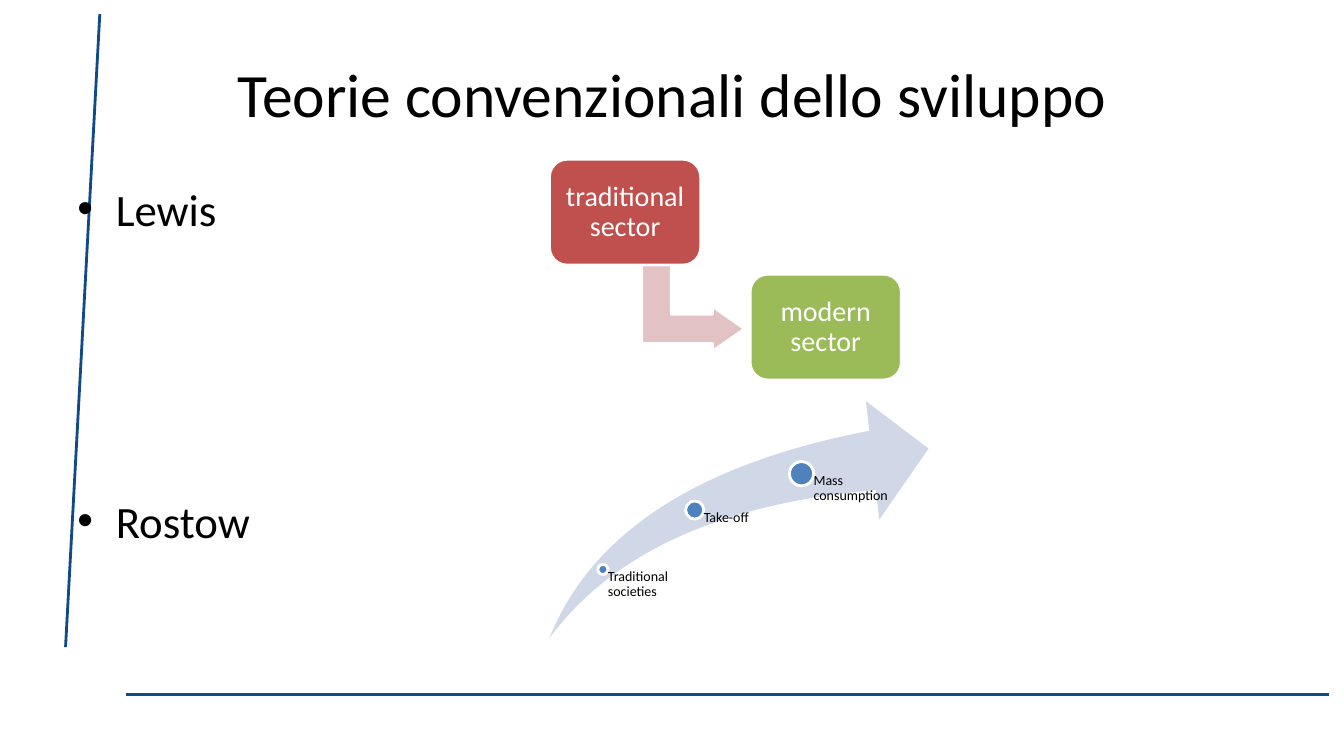
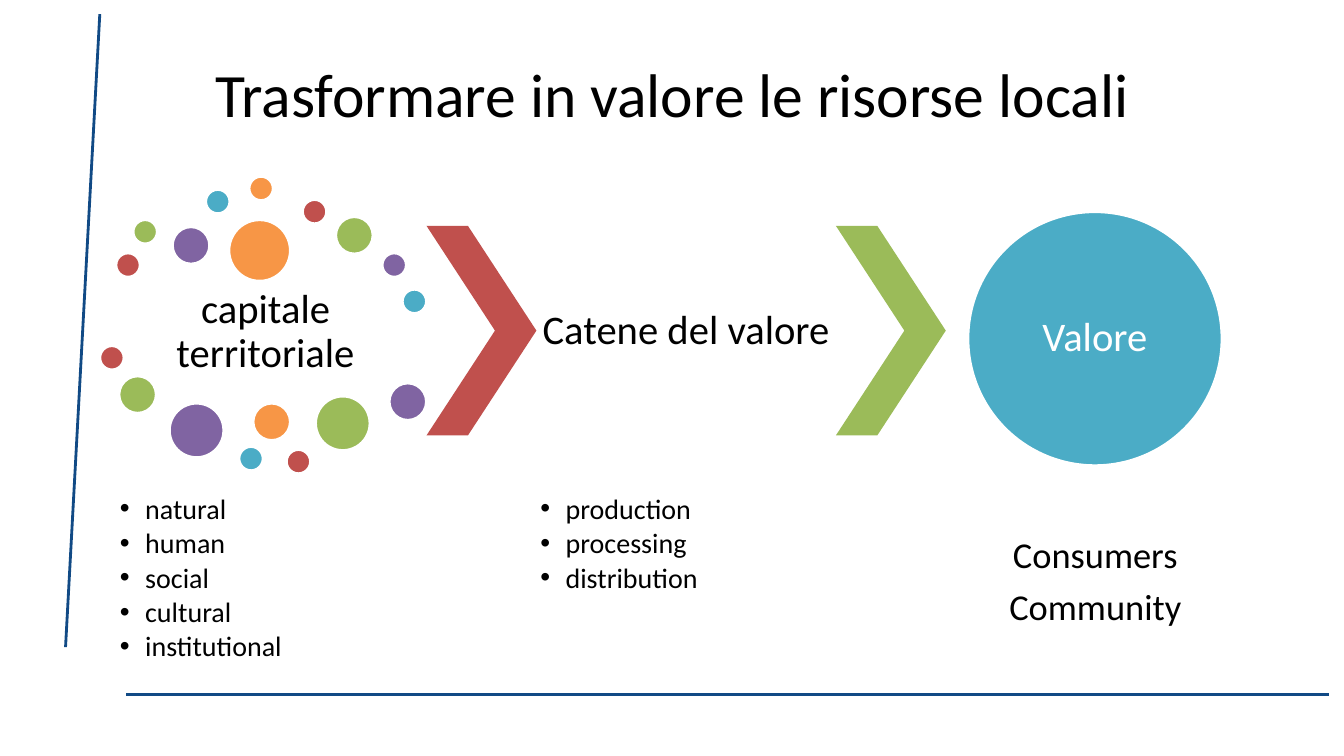
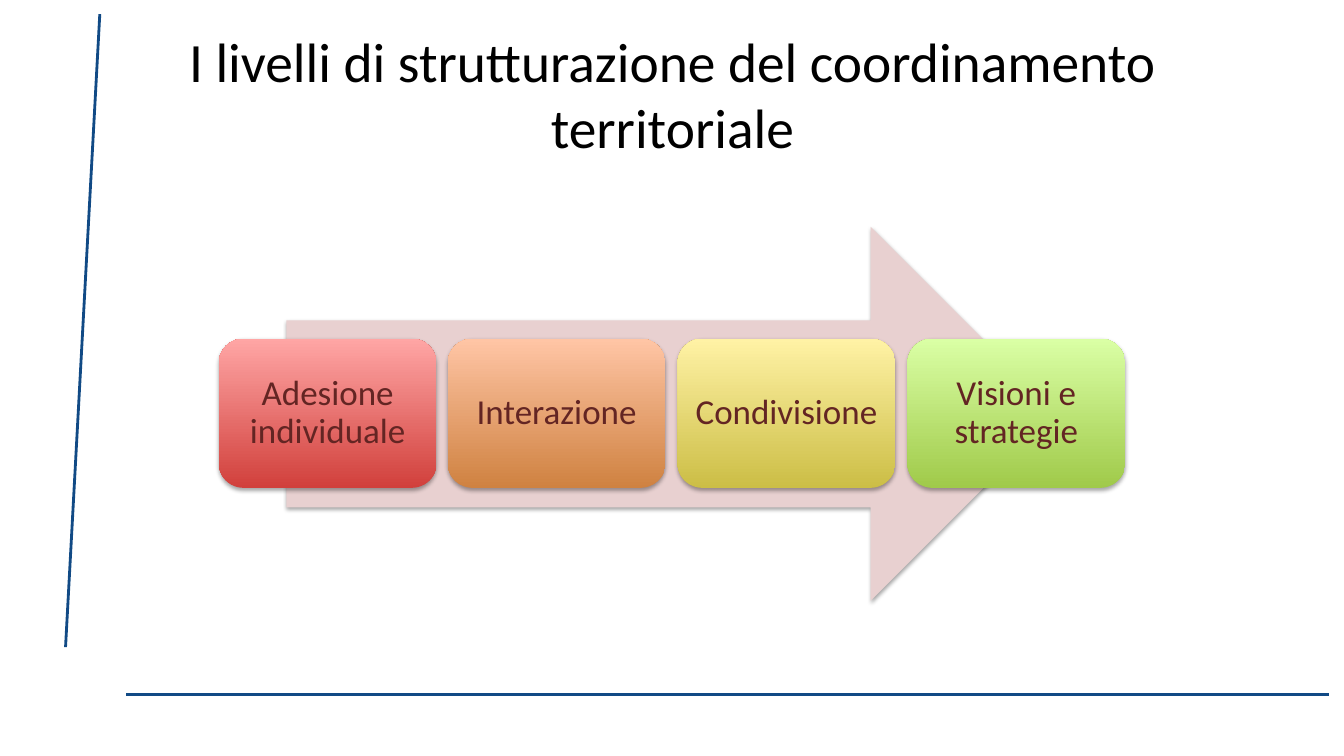
from dataclasses import dataclass
from itertools import cycle
from typing import NamedTuple, Optional

from lxml.etree import SubElement as Sub
from pptx import Presentation
from pptx.dml.color import RGBColor as Rgb
from pptx.enum.shapes import MSO_CONNECTOR as Link, MSO_SHAPE as Kind
from pptx.enum.text import MSO_ANCHOR as Anchor, PP_ALIGN as Align
from pptx.oxml.ns import qn
from pptx.util import Emu, Pt

SCALE = 9144  # EMU per px, 100 px to the inch


@dataclass(frozen=True)
class Theme:
    font: str = "Calibri"
    black: str = "000000"
    white: str = "FFFFFF"
    rule: str = "114A85"
    red: str = "C0504D"
    green: str = "9BBB59"
    purple: str = "8064A2"
    teal: str = "4BACC6"
    orange: str = "F79646"
    blue: str = "4F81BD"
    swoosh: str = "D0D8E8"
    bend: str = "E2C2C2"
    arrow: str = "E8D0D0"
    wine: str = "632523"
    title: float = 44
    long: float = 39.6  # two-line title
    body: float = 32
    head: float = 29
    aim: float = 26
    card: float = 25
    item: float = 20
    small: float = 10
    edge: float = 2


T = Theme()


class Box(NamedTuple):
    x: int
    y: int
    w: int
    h: int


class Style(NamedTuple):
    size: float
    color: str = T.black
    align: Align = Align.CENTER
    anchor: Anchor = Anchor.MIDDLE
    inset: tuple = (4, 4, 4, 4)
    line: float = 0.9
    after: float = 0
    before: float = 0  # from the second paragraph on
    hang: int = 0  # bullet indent, 0 for none


class Dot(NamedTuple):
    x: int
    y: int
    size: int


class Stage(NamedTuple):
    dot: Dot
    text: str


class Card(NamedTuple):
    text: str
    low: str
    high: str


def px(n: int) -> Emu:
    return Emu(n * SCALE)


def place(box: Box) -> list:
    return [px(n) for n in box]


def bullet(para, hang: int) -> None:
    props = para._p.get_or_add_pPr()
    props.set("marL", str(px(hang)))
    props.set("indent", str(-px(hang)))
    Sub(props, qn("a:buFont")).set("typeface", "Arial")
    Sub(props, qn("a:buChar")).set("char", "•")


def write(shape, lines: list, style: Style) -> None:
    frame = shape.text_frame
    frame.word_wrap = True
    frame.vertical_anchor = style.anchor
    (frame.margin_left, frame.margin_top,
     frame.margin_right, frame.margin_bottom) = [px(n) for n in style.inset]
    for i, text in enumerate(lines):
        para = frame.add_paragraph() if i else frame.paragraphs[0]
        para.text = text
        if style.hang:
            bullet(para, style.hang)
        para.alignment = style.align
        para.line_spacing = style.line
        para.space_after = Pt(style.after)
        para.space_before = Pt(style.before if i else 0)
        font = para.font
        font.name, font.size = T.font, Pt(style.size)
        font.color.rgb = Rgb.from_string(style.color)


def label(slide, box: Box, lines: list, style: Style) -> None:
    write(slide.shapes.add_textbox(*place(box)), lines, style)


def draw(slide, kind: Kind, box: Box, fill: Optional[str] = None,
         edge: bool = True, adjust: tuple = ()):
    shape = slide.shapes.add_shape(kind, *place(box))
    shape.shadow.inherit = False
    for i, ratio in enumerate(adjust):
        shape.adjustments[i] = ratio
    if fill:
        shape.fill.solid()
        shape.fill.fore_color.rgb = Rgb.from_string(fill)
    if edge:
        shape.line.color.rgb = Rgb.from_string(T.white)
        shape.line.width = Pt(T.edge)
    else:
        shape.line.fill.background()
    return shape


def circle(slide, dot: Dot, fill: str):
    return draw(slide, Kind.OVAL, Box(dot.x, dot.y, dot.size, dot.size), fill)


def shade(shape) -> None:
    """Soft shadow straight below the shape."""
    glow = Sub(shape._element.spPr.find(qn("a:effectLst")), qn("a:outerShdw"),
               blurRad=str(Pt(3.1)), dist=str(Pt(1.8)), dir="5400000",
               rotWithShape="0")
    tint = Sub(glow, qn("a:srgbClr"), val=T.black)
    Sub(tint, qn("a:alpha"), val="35000")


def start(deck, title: str, size: float = T.title):
    """New slide with the two rules and the title."""
    slide = deck.slides.add_slide(deck.slide_layouts[6])
    for ends in ((99, 14, 65, 642), (1318, 689, 125, 689)):
        rule = slide.shapes.add_connector(
            Link.STRAIGHT, *[px(n) for n in ends])
        rule.line.color.rgb = Rgb.from_string(T.rule)
        rule.line.width = Pt(T.edge)
        Sub(rule._element.spPr, qn("a:effectLst"))
    label(slide, Box(67, 30, 1200, 125), [title],
          Style(size, inset=(10, 5, 10, 5), line=1.0))
    return slide


# Slide 1: two theories
STAGES = [
    Stage(Dot(593, 560, 10), "Traditional societies"),
    Stage(Dot(680, 497, 18), "Take-off"),
    Stage(Dot(783, 458, 24), "Mass consumption"),
]


def theories(deck) -> None:
    slide = start(deck, "Teorie convenzionali dello sviluppo")
    label(slide, Box(67, 175, 1200, 495), ["Lewis", "Rostow"],
          Style(T.body, align=Align.LEFT, anchor=Anchor.TOP, line=1.0,
                inset=(10, 5, 10, 5), before=184.5, hang=38))

    # Rostow: growth along the swoosh
    draw(slide, Kind.SWOOSH_ARROW, Box(545, 398, 376, 235), T.swoosh,
         edge=False, adjust=(0.25, 0.25))
    for dot, text in STAGES:
        circle(slide, dot, T.blue)
        half = dot.size // 2
        top = dot.y + half
        label(slide, Box(dot.x + half, top, 90, 633 - top), [text],
              Style(T.small, align=Align.LEFT, anchor=Anchor.TOP,
                    inset=(half, 0, 0, 0)))

    # Lewis: from one sector to the other
    bend = draw(slide, Kind.BENT_UP_ARROW, Box(643, 253, 89, 102), T.bend,
                adjust=(0.328, 0.25, 0.358))
    bend.rotation = 90
    for x, y, text, fill in ((545, 158, "traditional sector", T.red),
                             (744, 272, "modern sector", T.green)):
        block = draw(slide, Kind.ROUNDED_RECTANGLE, Box(x, y, 150, 105), fill,
                     adjust=(0.167,))
        write(block, [text], Style(T.item, T.white, inset=(8, 8, 8, 8)))


# Slide 2: from local assets to value
HUES = (T.red, T.green, T.purple, T.teal, T.orange)
DOTS = [
    Dot(115, 251, 24), Dot(132, 218, 24), Dot(171, 225, 37),
    Dot(204, 188, 24), Dot(247, 175, 24), Dot(300, 198, 24),
    Dot(333, 215, 37), Dot(379, 251, 24), Dot(399, 287, 24),
    Dot(227, 218, 61), Dot(99, 343, 24), Dot(118, 373, 37),
    Dot(168, 400, 54), Dot(237, 443, 24), Dot(251, 400, 37),
    Dot(284, 446, 24), Dot(313, 393, 54), Dot(386, 380, 37),
]
LISTS = [
    (115, ["natural", "human", "social", "cultural", "institutional"]),
    (532, ["production", "processing", "distribution"]),
]


def value(deck) -> None:
    slide = start(deck, "Trasformare in valore le risorse locali")
    head = Style(T.head)
    label(slide, Box(115, 281, 297, 98), ["capitale territoriale"], head)
    label(slide, Box(532, 225, 297, 208), ["Catene del valore"], head)
    for x, lines in LISTS:
        label(slide, Box(x, 487, 297, 183), lines,
              Style(T.item, align=Align.LEFT, anchor=Anchor.TOP,
                    after=3, hang=25))
    for dot, hue in zip(DOTS, cycle(HUES)):
        circle(slide, dot, hue)
    for x, fill in ((423, T.red), (829, T.green)):
        draw(slide, Kind.CHEVRON, Box(x, 224, 109, 208), fill, edge=False,
             adjust=(0.623,))
    goal = circle(slide, Dot(960, 210, 252), T.teal)
    write(goal, ["Valore"], Style(T.head, T.white, inset=(0, 0, 0, 0)))
    label(slide, Box(938, 487, 297, 183), ["Consumers", "Community"],
          Style(T.aim, after=9))


# Slide 3: levels along an arrow
CARDS = [
    Card("Adesione individuale", "D1403C", "FFA6A5"),
    Card("Interazione", "CF8241", "FFC5A5"),
    Card("Condivisione", "CCBE46", "FFF2A5"),
    Card("Visioni e strategie", "A0CA4A", "DAFFA5"),
]
FIRST, LAST = 217, 900  # left edges of the outer cards


def levels(deck) -> None:
    slide = start(deck, "I livelli di strutturazione del coordinamento "
                  "territoriale", T.long)
    shade(draw(slide, Kind.RIGHT_ARROW, Box(284, 225, 765, 371), T.arrow,
               edge=False))
    for i, card in enumerate(CARDS):
        x = FIRST + (LAST - FIRST) * i // (len(CARDS) - 1)
        block = draw(slide, Kind.ROUNDED_RECTANGLE, Box(x, 336, 216, 148),
                     edge=False)
        block.fill.gradient()
        block.fill.gradient_angle = 90
        for stop, tone in zip(block.fill.gradient_stops,
                              (card.low, card.high)):
            stop.color.rgb = Rgb.from_string(tone)
        shade(block)
        write(block, [card.text],
              Style(T.card, T.wine, inset=(10, 10, 10, 10)))


def main() -> None:
    deck = Presentation()
    deck.slide_width, deck.slide_height = px(1333), px(750)
    for build in (theories, value, levels):
        build(deck)
    deck.save("out.pptx")


if __name__ == "__main__":
    main()
